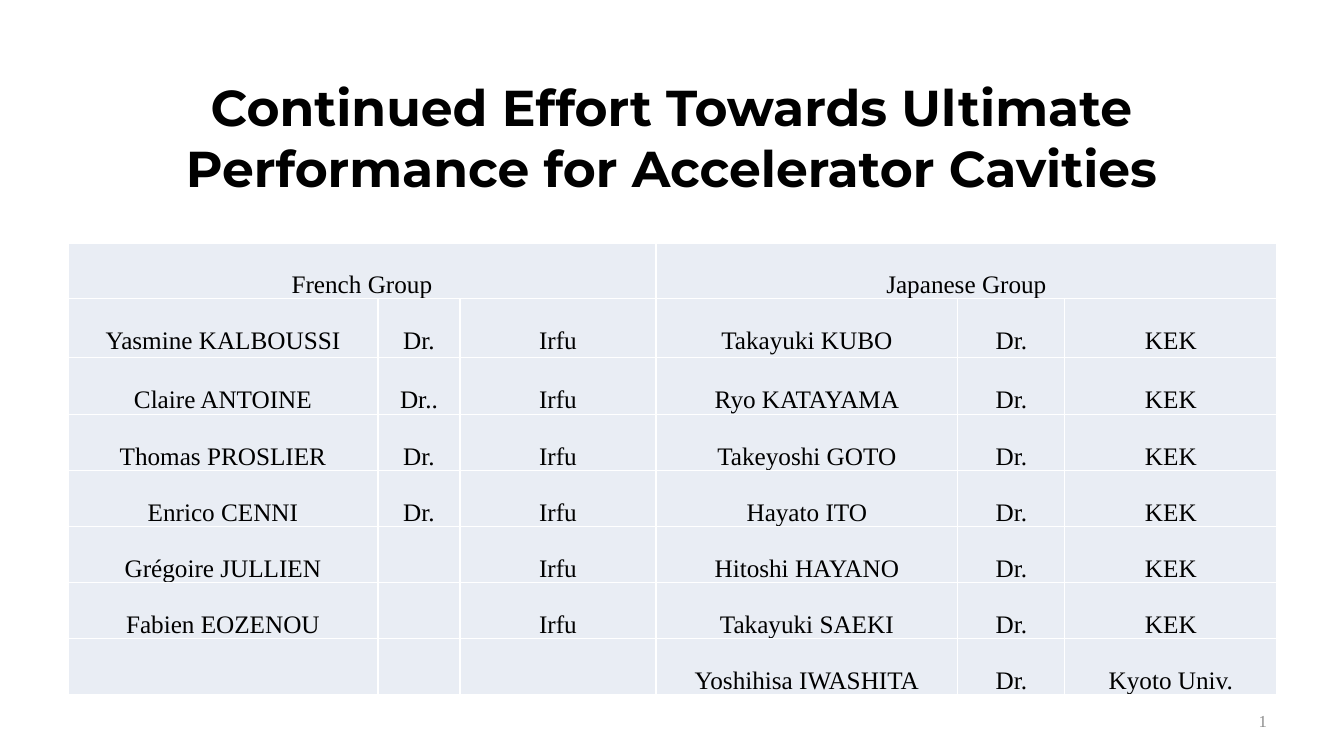
import lxml.etree
import pptx
import pptx.dml.color
import pptx.enum.text
import pptx.oxml
import pptx.oxml.ns
import pptx.util

TITLE = "Continued Effort Towards Ultimate Performance for Accelerator Cavities"
PAGE_NUMBER = "1"
GROUPS = ["French Group", "Japanese Group"]
MEMBERS = [
    ("Yasmine KALBOUSSI", "Dr.", "Irfu", "Takayuki KUBO", "Dr.", "KEK"),
    ("Claire ANTOINE", "Dr..", "Irfu", "Ryo KATAYAMA", "Dr.", "KEK"),
    ("Thomas PROSLIER", "Dr.", "Irfu", "Takeyoshi GOTO", "Dr.", "KEK"),
    ("Enrico CENNI", "Dr.", "Irfu", "Hayato ITO", "Dr.", "KEK"),
    ("Grégoire JULLIEN", "", "Irfu", "Hitoshi HAYANO", "Dr.", "KEK"),
    ("Fabien EOZENOU", "", "Irfu", "Takayuki SAEKI", "Dr.", "KEK"),
    ("", "", "", "Yoshihisa IWASHITA", "Dr.", "Kyoto Univ."),
]

SLIDE_SIZE = (1344, 756)
TITLE_BOX = (144, 71, 1055, 132)
PAGE_NUMBER_BOX = (964, 701, 313, 40)
MEMBERS_ORIGIN = (68, 243)
COLUMN_WIDTHS = [310, 82, 196, 302, 107, 212]
ROW_HEIGHTS = [55, 59, 57, 56, 56, 56, 56, 55]
GROUP_COLUMNS = 3
CELL_SIDE_MARGIN = 7

BLACK = pptx.dml.color.RGBColor(0x00, 0x00, 0x00)
WHITE = pptx.dml.color.RGBColor(0xFF, 0xFF, 0xFF)
GREY = pptx.dml.color.RGBColor(0x8C, 0x8C, 0x8C)
PALE_BLUE = pptx.dml.color.RGBColor(0xE9, 0xED, 0xF4)
SERIF = "Times New Roman"
SANS = "Montserrat"
CENTER = pptx.enum.text.PP_ALIGN.CENTER
RIGHT = pptx.enum.text.PP_ALIGN.RIGHT
MIDDLE = pptx.enum.text.MSO_ANCHOR.MIDDLE


def px(length):
    return pptx.util.Emu(round(length * 9144000 / 1008))


def place(shape, box):
    shape.left, shape.top, shape.width, shape.height = map(px, box)


def write(frame, text, size, font=SERIF, color=BLACK, bold=False,
          align=CENTER, line_spacing=1.0, space_before=0):
    frame.word_wrap = True
    paragraph = frame.paragraphs[0]
    paragraph.alignment = align
    paragraph.line_spacing = line_spacing
    paragraph.space_before = pptx.util.Pt(space_before)
    paragraph.font.size = pptx.util.Pt(size)
    if text:
        run = paragraph.add_run()
        run.text = text
        run.font.name = font
        run.font.size = pptx.util.Pt(size)
        run.font.bold = bold
        run.font.color.rgb = color


def add_borders(cell):
    properties = cell._tc.get_or_add_tcPr()
    for side in ("a:lnL", "a:lnR", "a:lnT", "a:lnB"):
        line = lxml.etree.SubElement(
            properties, pptx.oxml.ns.qn(side), w=str(pptx.util.Pt(1)))
        fill = lxml.etree.SubElement(line, pptx.oxml.ns.qn("a:solidFill"))
        lxml.etree.SubElement(
            fill, pptx.oxml.ns.qn("a:srgbClr"), val=str(WHITE))


def format_cell(cell, text):
    add_borders(cell)
    cell.fill.solid()
    cell.fill.fore_color.rgb = PALE_BLUE
    cell.margin_left = cell.margin_right = px(CELL_SIDE_MARGIN)
    cell.margin_top = cell.margin_bottom = 0
    write(cell.text_frame, text, 18, line_spacing=2.0)


def add_members(slide):
    table = slide.shapes.add_table(
        len(ROW_HEIGHTS), len(COLUMN_WIDTHS), *map(px, MEMBERS_ORIGIN),
        px(sum(COLUMN_WIDTHS)), px(sum(ROW_HEIGHTS))).table
    table.first_row = False
    table.horz_banding = False
    for column, width in zip(table.columns, COLUMN_WIDTHS):
        column.width = px(width)
    for row, height in zip(table.rows, ROW_HEIGHTS):
        row.height = px(height)

    heading = [""] * len(COLUMN_WIDTHS)
    for index, group in enumerate(GROUPS):
        first = index * GROUP_COLUMNS
        heading[first] = group
        table.cell(0, first).merge(table.cell(0, first + GROUP_COLUMNS - 1))
    for row, texts in enumerate([heading, *MEMBERS]):
        for column, text in enumerate(texts):
            format_cell(table.cell(row, column), text)


def main():
    deck = pptx.Presentation()
    deck.slide_width, deck.slide_height = map(px, SLIDE_SIZE)
    slide = deck.slides.add_slide(deck.slide_layouts[5])

    title = slide.shapes.title
    place(title, TITLE_BOX)
    title.text_frame.auto_size = pptx.enum.text.MSO_AUTO_SIZE.NONE
    title.text_frame.vertical_anchor = MIDDLE
    write(title.text_frame, TITLE, 36, font=SANS, bold=True)

    add_members(slide)

    page_number = slide.shapes.add_textbox(*map(px, PAGE_NUMBER_BOX))
    page_number.text_frame.vertical_anchor = MIDDLE
    write(page_number.text_frame, PAGE_NUMBER, 12, color=GREY, align=RIGHT)

    deck.save("out.pptx")


if __name__ == "__main__":
    main()
